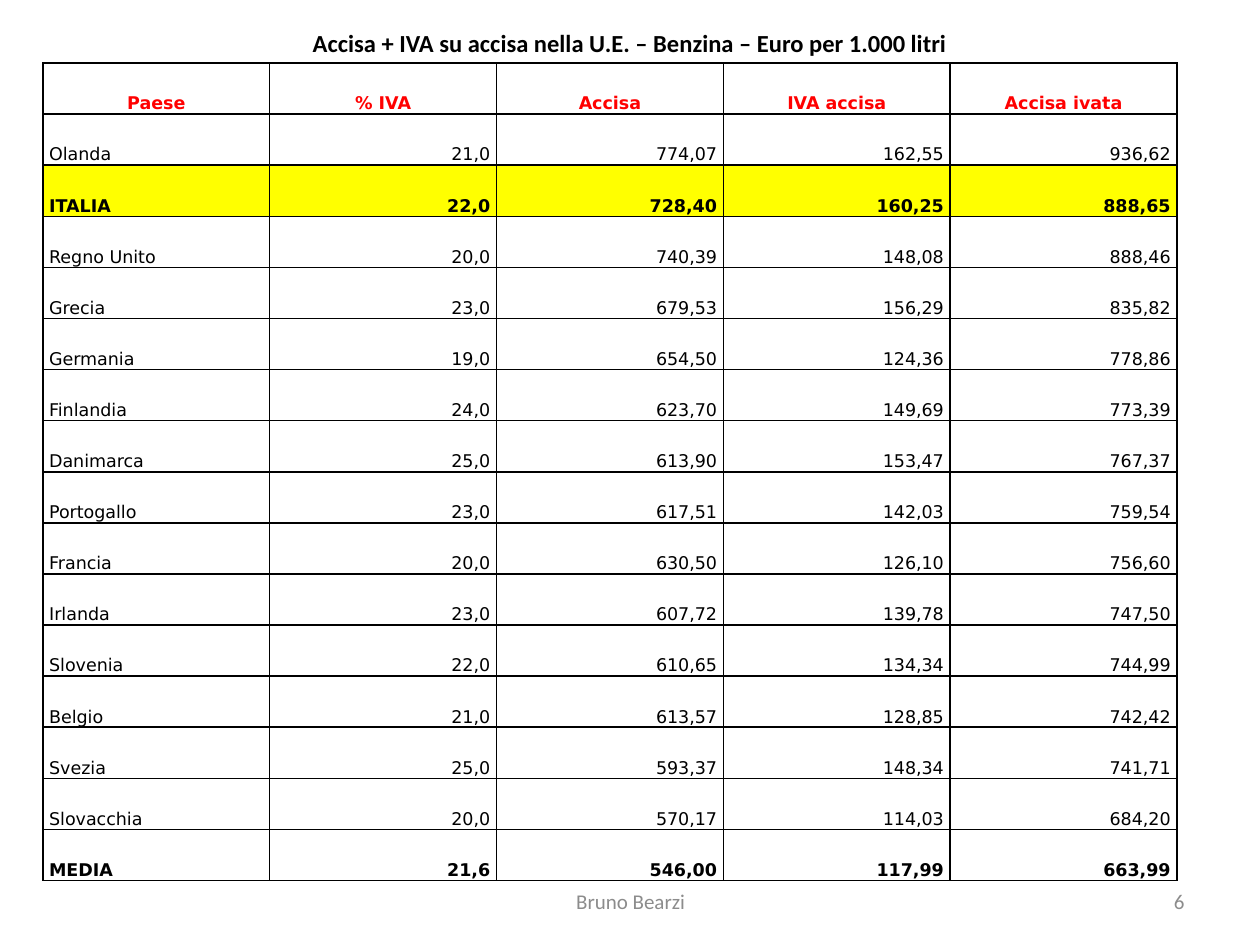
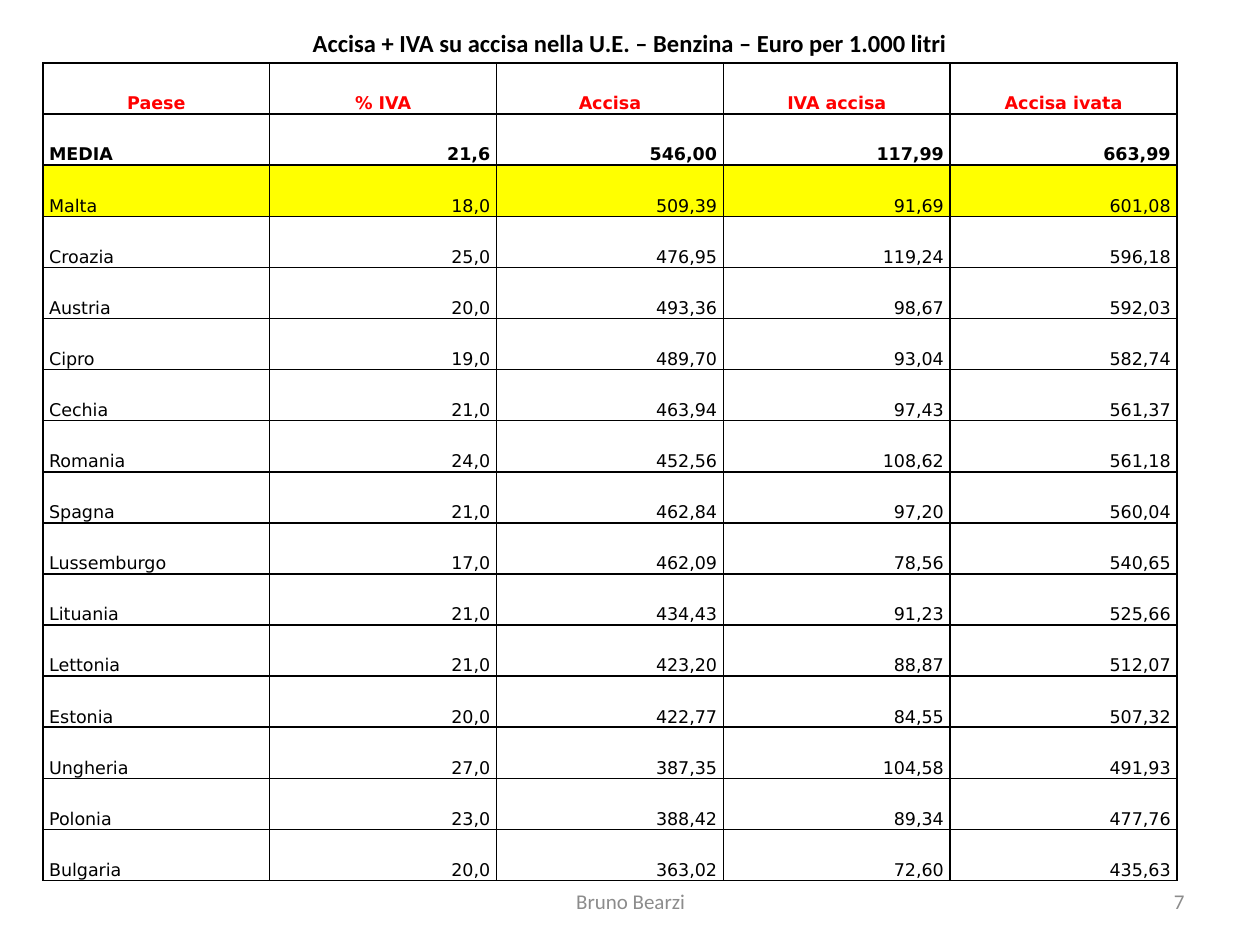
"""Build two slides comparing petrol excise duty and VAT across the EU."""
from typing import NamedTuple

from lxml import etree
from pptx import Presentation
from pptx.dml.color import RGBColor
from pptx.enum.text import MSO_ANCHOR, MSO_AUTO_SIZE, PP_ALIGN
from pptx.oxml.ns import qn
from pptx.util import Inches, Pt

LEFT, CENTER, RIGHT = PP_ALIGN.LEFT, PP_ALIGN.CENTER, PP_ALIGN.RIGHT
MIDDLE, BOTTOM = MSO_ANCHOR.MIDDLE, MSO_ANCHOR.BOTTOM
NO_AUTOFIT = MSO_AUTO_SIZE.NONE

BLACK = RGBColor(0x00, 0x00, 0x00)
RED = RGBColor(0xFF, 0x00, 0x00)
YELLOW = RGBColor(0xFF, 0xFF, 0x00)
GREY = RGBColor(0x8C, 0x8C, 0x8C)

TITLE_FONT, TABLE_FONT = "Calibri", "DejaVu Sans"
TITLE = "Accisa + IVA su accisa nella U.E. – Benzina – Euro per 1.000 litri"
AUTHOR = "Bruno Bearzi"
TITLE_ONLY_LAYOUT = 5
BORDER_WIDTH = Pt(1)
BORDER_SIDES = ("lnL", "lnR", "lnT", "lnB")


class CountryRow(NamedTuple):
    """One table row with its emphasis."""

    country: str
    vat_rate: str
    excise: str
    excise_vat: str
    excise_with_vat: str
    bold: bool = False
    highlighted: bool = False

    @property
    def texts(self) -> tuple[str, ...]:
        """Return the five visible cell texts."""
        return self[:5]


class FooterItem(NamedTuple):
    """A line of text at the foot of the page."""

    text: str
    left: float
    width: float
    alignment: PP_ALIGN


class ExcisePage(NamedTuple):
    """One page of the ranking."""

    number: int
    rows: list[CountryRow]


HEADER = CountryRow("Paese", "% IVA", "Accisa", "IVA accisa", "Accisa ivata", bold=True)
AVERAGE = CountryRow("MEDIA", "21,6", "546,00", "117,99", "663,99", bold=True)

ABOVE_AVERAGE = [
    CountryRow("Olanda", "21,0", "774,07", "162,55", "936,62"),
    CountryRow("ITALIA", "22,0", "728,40", "160,25", "888,65", bold=True, highlighted=True),
    CountryRow("Regno Unito", "20,0", "740,39", "148,08", "888,46"),
    CountryRow("Grecia", "23,0", "679,53", "156,29", "835,82"),
    CountryRow("Germania", "19,0", "654,50", "124,36", "778,86"),
    CountryRow("Finlandia", "24,0", "623,70", "149,69", "773,39"),
    CountryRow("Danimarca", "25,0", "613,90", "153,47", "767,37"),
    CountryRow("Portogallo", "23,0", "617,51", "142,03", "759,54"),
    CountryRow("Francia", "20,0", "630,50", "126,10", "756,60"),
    CountryRow("Irlanda", "23,0", "607,72", "139,78", "747,50"),
    CountryRow("Slovenia", "22,0", "610,65", "134,34", "744,99"),
    CountryRow("Belgio", "21,0", "613,57", "128,85", "742,42"),
    CountryRow("Svezia", "25,0", "593,37", "148,34", "741,71"),
    CountryRow("Slovacchia", "20,0", "570,17", "114,03", "684,20"),
]

BELOW_AVERAGE = [
    CountryRow("Malta", "18,0", "509,39", "91,69", "601,08", highlighted=True),
    CountryRow("Croazia", "25,0", "476,95", "119,24", "596,18"),
    CountryRow("Austria", "20,0", "493,36", "98,67", "592,03"),
    CountryRow("Cipro", "19,0", "489,70", "93,04", "582,74"),
    CountryRow("Cechia", "21,0", "463,94", "97,43", "561,37"),
    CountryRow("Romania", "24,0", "452,56", "108,62", "561,18"),
    CountryRow("Spagna", "21,0", "462,84", "97,20", "560,04"),
    CountryRow("Lussemburgo", "17,0", "462,09", "78,56", "540,65"),
    CountryRow("Lituania", "21,0", "434,43", "91,23", "525,66"),
    CountryRow("Lettonia", "21,0", "423,20", "88,87", "512,07"),
    CountryRow("Estonia", "20,0", "422,77", "84,55", "507,32"),
    CountryRow("Ungheria", "27,0", "387,35", "104,58", "491,93"),
    CountryRow("Polonia", "23,0", "388,42", "89,34", "477,76"),
    CountryRow("Bulgaria", "20,0", "363,02", "72,60", "435,63"),
]

PAGES = [
    ExcisePage(6, [HEADER, *ABOVE_AVERAGE, AVERAGE]),
    ExcisePage(7, [HEADER, AVERAGE, *BELOW_AVERAGE]),
]


def format_paragraph(para, alignment: PP_ALIGN, font_name: str, size: int,
                     color: RGBColor, bold: bool = False) -> None:
    """Set the alignment and font of a paragraph."""
    para.alignment = alignment
    para.font.name = font_name
    para.font.size = Pt(size)
    para.font.bold = bold
    para.font.color.rgb = color


def add_title(page) -> None:
    """Fill and place the title, raised clear of the table."""
    title = page.shapes.title
    title.left, title.top = Inches(0.5), Inches(0.3)
    title.width, title.height = Inches(9), Inches(0.29)
    frame = title.text_frame
    frame.text = TITLE
    frame.auto_size = NO_AUTOFIT
    frame.vertical_anchor = MIDDLE
    frame.margin_top, frame.margin_bottom = 0, Inches(0.21)
    format_paragraph(frame.paragraphs[0], CENTER, TITLE_FONT, 14, BLACK, bold=True)


def add_borders(cell) -> None:
    """Draw a solid black line on each side of a cell."""
    properties = cell._tc.get_or_add_tcPr()
    for position, side in enumerate(BORDER_SIDES):
        line = etree.Element(qn(f"a:{side}"), w=str(BORDER_WIDTH))
        fill = etree.SubElement(line, qn("a:solidFill"))
        etree.SubElement(fill, qn("a:srgbClr"), val=str(BLACK))
        properties.insert(position, line)


def fill_cell(cell, text: str, alignment: PP_ALIGN, row: CountryRow) -> None:
    """Write and format one cell."""
    cell.text = text
    cell.vertical_anchor = BOTTOM
    cell.margin_left = cell.margin_right = Inches(0.05)
    cell.margin_top = cell.margin_bottom = 0
    color = RED if row is HEADER else BLACK
    format_paragraph(cell.text_frame.paragraphs[0], alignment, TABLE_FONT, 10, color, row.bold)
    if row.highlighted:
        cell.fill.solid()
        cell.fill.fore_color.rgb = YELLOW
    else:
        cell.fill.background()
    add_borders(cell)


def add_excise_table(page, rows: list[CountryRow]) -> None:
    """Add the table of countries."""
    table = page.shapes.add_table(
        len(rows), len(HEADER.texts), Inches(0.34), Inches(0.5), Inches(9), Inches(6.49)
    ).table
    table.first_row = table.horz_banding = False
    for row_index, row in enumerate(rows):
        for column_index, text in enumerate(row.texts):
            body_alignment = RIGHT if column_index else LEFT
            alignment = CENTER if row is HEADER else body_alignment
            fill_cell(table.cell(row_index, column_index), text, alignment, row)


def add_footer_item(page, item: FooterItem) -> None:
    """Add one footer text box."""
    box = page.shapes.add_textbox(
        Inches(item.left), Inches(6.95), Inches(item.width), Inches(0.4)
    )
    frame = box.text_frame
    frame.word_wrap = True
    frame.vertical_anchor = MIDDLE
    frame.text = item.text
    format_paragraph(frame.paragraphs[0], item.alignment, TITLE_FONT, 12, GREY)


def build_page(deck, content: ExcisePage) -> None:
    """Add one complete slide."""
    page = deck.slides.add_slide(deck.slide_layouts[TITLE_ONLY_LAYOUT])
    add_title(page)
    add_excise_table(page, content.rows)
    add_footer_item(page, FooterItem(str(content.number), 7.17, 2.33, RIGHT))
    add_footer_item(page, FooterItem(AUTHOR, 3.42, 3.17, CENTER))


def main() -> None:
    """Build and save the deck."""
    deck = Presentation()
    deck.slide_width, deck.slide_height = Inches(10), Inches(7.5)
    for content in PAGES:
        build_page(deck, content)
    deck.save("out.pptx")


if __name__ == "__main__":
    main()
